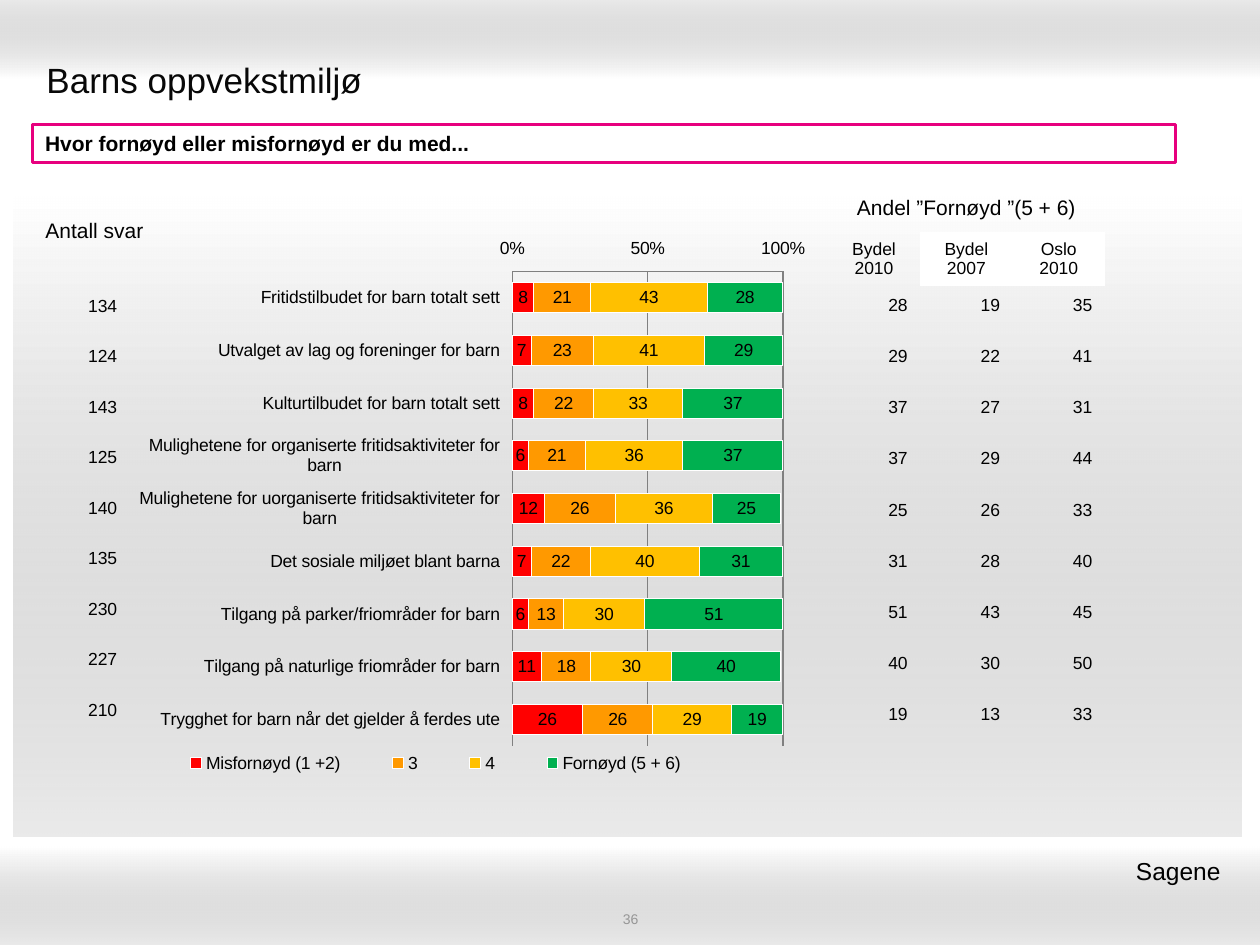
"""Build the slide on how content people are with conditions for children."""
from dataclasses import dataclass
from typing import NamedTuple, Optional, Sequence

from lxml import etree
from pptx import Presentation
from pptx.chart.data import CategoryChartData
from pptx.dml.color import RGBColor
from pptx.enum.chart import XL_CHART_TYPE, XL_LEGEND_POSITION, XL_TICK_LABEL_POSITION, XL_TICK_MARK
from pptx.enum.shapes import MSO_SHAPE
from pptx.enum.text import MSO_ANCHOR, PP_ALIGN
from pptx.oxml import parse_xml
from pptx.oxml.ns import nsdecls, qn
from pptx.util import Inches, Pt

BARS = XL_CHART_TYPE.BAR_STACKED
BOTTOM = XL_LEGEND_POSITION.BOTTOM
LOW = XL_TICK_LABEL_POSITION.LOW
INSIDE, NO_TICK = XL_TICK_MARK.INSIDE, XL_TICK_MARK.NONE
RECT = MSO_SHAPE.RECTANGLE
MIDDLE = MSO_ANCHOR.MIDDLE
LEFT, CENTER, RIGHT = PP_ALIGN.LEFT, PP_ALIGN.CENTER, PP_ALIGN.RIGHT

BLACK = RGBColor(0x00, 0x00, 0x00)
INK = RGBColor(0x08, 0x08, 0x08)
WHITE = RGBColor(0xFF, 0xFF, 0xFF)
GREY = RGBColor(0x99, 0x99, 0x99)
PALE = RGBColor(0x96, 0x96, 0x96)
LINE = RGBColor(0x80, 0x80, 0x80)
PINK = RGBColor(0xE7, 0x00, 0x7E)
RED = RGBColor(0xFF, 0x00, 0x00)
ORANGE = RGBColor(0xFF, 0x99, 0x00)
YELLOW = RGBColor(0xFF, 0xC0, 0x00)
GREEN = RGBColor(0x00, 0xB0, 0x50)

FONT = "Arial"
WIDE, HIGH = Inches(10), Inches(7.5)
NO_STYLE = "{2D5ABB26-0587-4C30-8999-92F81FD0307C}"


class Box(NamedTuple):
    """A place in percent of the slide's width and height."""
    x: float
    y: float
    w: float
    h: float

    def place(self) -> tuple[int, ...]:
        sides = (WIDE, HIGH, WIDE, HIGH)
        return tuple(int(side * part / 100) for side, part in zip(sides, self))


@dataclass
class Band:
    """A fading background band."""
    box: Box
    angle: int


@dataclass
class Note:
    """A line of text with its look."""
    box: Box
    text: str
    size: int
    color: RGBColor = BLACK
    align: PP_ALIGN = LEFT


@dataclass
class Item:
    """One question: answer count, split in percent, and other shares."""
    name: str
    count: int
    split: tuple[int, ...]
    peers: tuple[int, ...]


BANDS = (
    Band(Box(0, 0, 100, 8.27), 90),
    Band(Box(0, 89.6, 100, 10.4), 270),
    Band(Box(1.1, 20.8, 97.4, 67.73), 270),
)
NOTES = (
    Note(Box(2.7, 4.8, 94.5, 7.33), "Barns oppvekstmiljø", 20, INK),
    Note(Box(34.2, 96.27, 31.7, 1.87), "36", 8, PALE, CENTER),
    Note(Box(61, 89.87, 37.4, 4.53), "Sagene ", 14, BLACK, RIGHT),
)
ASK = Note(Box(2.6, 13.2, 90.7, 4), "Hvor fornøyd eller misfornøyd er du med...", 12)
GROUPS = (("Misfornøyd (1 +2)", RED), ("3", ORANGE), ("4", YELLOW), ("Fornøyd (5 + 6)", GREEN))
ITEMS = (
    Item("Fritidstilbudet for barn totalt sett", 134, (8, 21, 43, 28), (19, 35)),
    Item("Utvalget av lag og foreninger for barn", 124, (7, 23, 41, 29), (22, 41)),
    Item("Kulturtilbudet for barn totalt sett", 143, (8, 22, 33, 37), (27, 31)),
    Item("Mulighetene for organiserte fritidsaktiviteter for barn", 125, (6, 21, 36, 37), (29, 44)),
    Item("Mulighetene for uorganiserte fritidsaktiviteter for barn", 140, (12, 26, 36, 25), (26, 33)),
    Item("Det sosiale miljøet blant barna", 135, (7, 22, 40, 31), (28, 40)),
    Item("Tilgang på parker/friområder for barn", 230, (6, 13, 30, 51), (43, 45)),
    Item("Tilgang på naturlige friområder for barn", 227, (11, 18, 30, 40), (30, 50)),
    Item("Trygghet for barn når det gjelder å ferdes ute", 210, (26, 26, 29, 19), (13, 33)),
)


def style(frame, size: int, color: RGBColor, align: PP_ALIGN, bold: bool = False) -> None:
    for para in frame.paragraphs:
        para.alignment = align
        font = para.font
        font.name, font.size, font.bold = FONT, Pt(size), bold
        font.color.rgb = color


def add_band(shapes, band: Band) -> None:
    shape = shapes.add_shape(RECT, *band.box.place())
    shape.shadow.inherit = False
    shape.line.fill.background()
    shape.fill.gradient()
    shape.fill.gradient_angle = band.angle
    for stop, color, spot in zip(shape.fill.gradient_stops, (WHITE, GREY), (0, 1)):
        stop.color.rgb, stop.position = color, spot
    last = list(shape._element.spPr.iter(qn("a:srgbClr")))[-1]
    etree.SubElement(last, qn("a:alpha"), val="20000")


def write(shape, note: Note, bold: bool = False) -> None:
    frame = shape.text_frame
    frame.word_wrap = True
    frame.vertical_anchor = MIDDLE
    frame.margin_top = frame.margin_bottom = 0
    frame.text = note.text
    style(frame, note.size, note.color, note.align, bold)


def add_ask(shapes, note: Note) -> None:
    shape = shapes.add_shape(RECT, *note.box.place())
    shape.shadow.inherit = False
    shape.fill.solid()
    shape.fill.fore_color.rgb = WHITE
    shape.line.color.rgb, shape.line.width = PINK, Pt(2)
    write(shape, note, True)


def add_grid(shapes, box: Box, rows: Sequence[Sequence[str]], align: PP_ALIGN,
             size: int = 10, parts: Optional[Sequence[float]] = None):
    place = box.place()
    table = shapes.add_table(len(rows), len(rows[0]), *place).table
    table.first_row = table.horz_banding = False
    table._tbl.tblPr[0].text = NO_STYLE
    for i, row in enumerate(rows):
        table.rows[i].height = int(place[3] * (parts[i] if parts else 1 / len(rows)))
        for j, text in enumerate(row):
            cell = table.cell(i, j)
            cell.text, cell.vertical_anchor = text, MIDDLE
            cell.fill.background()
            style(cell.text_frame, size, BLACK, align)
    return table


def add_head(shapes, box: Box) -> None:
    rows = (("Andel ”Fornøyd ”(5 + 6)", "", ""), ("Bydel\n2010", "Bydel\n2007", "Oslo\n2010"))
    table = add_grid(shapes, box, rows, CENTER, parts=(0.46, 0.54))
    style(table.cell(0, 0).text_frame, 12, BLACK, CENTER)
    table.cell(0, 0).merge(table.cell(0, 2))
    for j in (1, 2):
        fill = table.cell(1, j).fill
        fill.solid()
        fill.fore_color.rgb = WHITE


def set_layout(owner, box: Box, inner: bool = False) -> None:
    target = '<c:layoutTarget val="inner"/>' if inner else ""
    modes = "".join(f'<c:{side}Mode val="edge"/>' for side in "xy")
    sizes = "".join(f'<c:{side} val="{part}"/>' for side, part in zip("xywh", box))
    for old in owner.findall(qn("c:layout")):
        owner.remove(old)
    spot = 0 if inner else 1
    owner.insert(spot, parse_xml(f'<c:layout {nsdecls("c")}><c:manualLayout>{target}{modes}{sizes}'
                                 '</c:manualLayout></c:layout>'))


def add_bars(shapes, box: Box) -> None:
    data = CategoryChartData(number_format="0")
    data.categories = [item.name for item in ITEMS]
    for i, (name, _) in enumerate(GROUPS):
        data.add_series(name, [item.split[i] for item in ITEMS])
    chart = shapes.add_chart(BARS, *box.place(), data).chart
    chart.has_title = False
    chart.font.name, chart.font.size = FONT, Pt(10)
    chart.font.color.rgb = BLACK
    plot = chart.plots[0]
    plot.gap_width, plot.overlap, plot.vary_by_categories = 75, 100, False
    for series, (_, color) in zip(plot.series, GROUPS):
        series.format.fill.solid()
        series.format.fill.fore_color.rgb = color
        series.format.line.color.rgb = WHITE
        labels = series.data_labels
        labels.show_value = True
        labels.number_format, labels.number_format_is_linked = "0", False
    names, scale = chart.category_axis, chart.value_axis
    names.reverse_order = True
    names.major_tick_mark = NO_TICK
    scale.minimum_scale, scale.maximum_scale, scale.major_unit = 0, 100, 50
    scale.major_tick_mark = INSIDE
    scale.tick_labels.number_format = "General\\%"
    scale.tick_labels.number_format_is_linked = False
    scale.major_gridlines.format.line.color.rgb = LINE
    for axis in (names, scale):
        axis.tick_label_position = LOW
        axis.format.line.color.rgb = LINE
    chart.has_legend = True
    chart.legend.position, chart.legend.include_in_layout = BOTTOM, False
    set_layout(chart._chartSpace.chart.plotArea, Box(0.56, 0.08, 0.39, 0.83), True)
    set_layout(chart.legend._element, Box(0.03, 0.91, 0.84, 0.06))


def main() -> None:
    deck = Presentation()
    deck.slide_width, deck.slide_height = WIDE, HIGH
    shapes = deck.slides.add_slide(deck.slide_layouts[6]).shapes
    for band in BANDS:
        add_band(shapes, band)
    for note in NOTES:
        write(shapes.add_textbox(*note.box.place()), note)
    add_ask(shapes, ASK)
    add_bars(shapes, Box(9.8, 23.87, 55.1, 60.53))
    shares = [[str(n) for n in (item.split[-1], *item.peers)] for item in ITEMS]
    add_grid(shapes, Box(65.7, 29.6, 22, 48.8), shares, RIGHT)
    add_head(shapes, Box(65.7, 19.6, 22, 10.67))
    add_grid(shapes, Box(5.1, 29.73, 5.2, 48.13), [[str(item.count)] for item in ITEMS], RIGHT)
    add_grid(shapes, Box(0.4, 20.53, 14.2, 7.87), [["Antall svar"]], CENTER, 12)
    deck.save("out.pptx")


if __name__ == "__main__":
    main()
